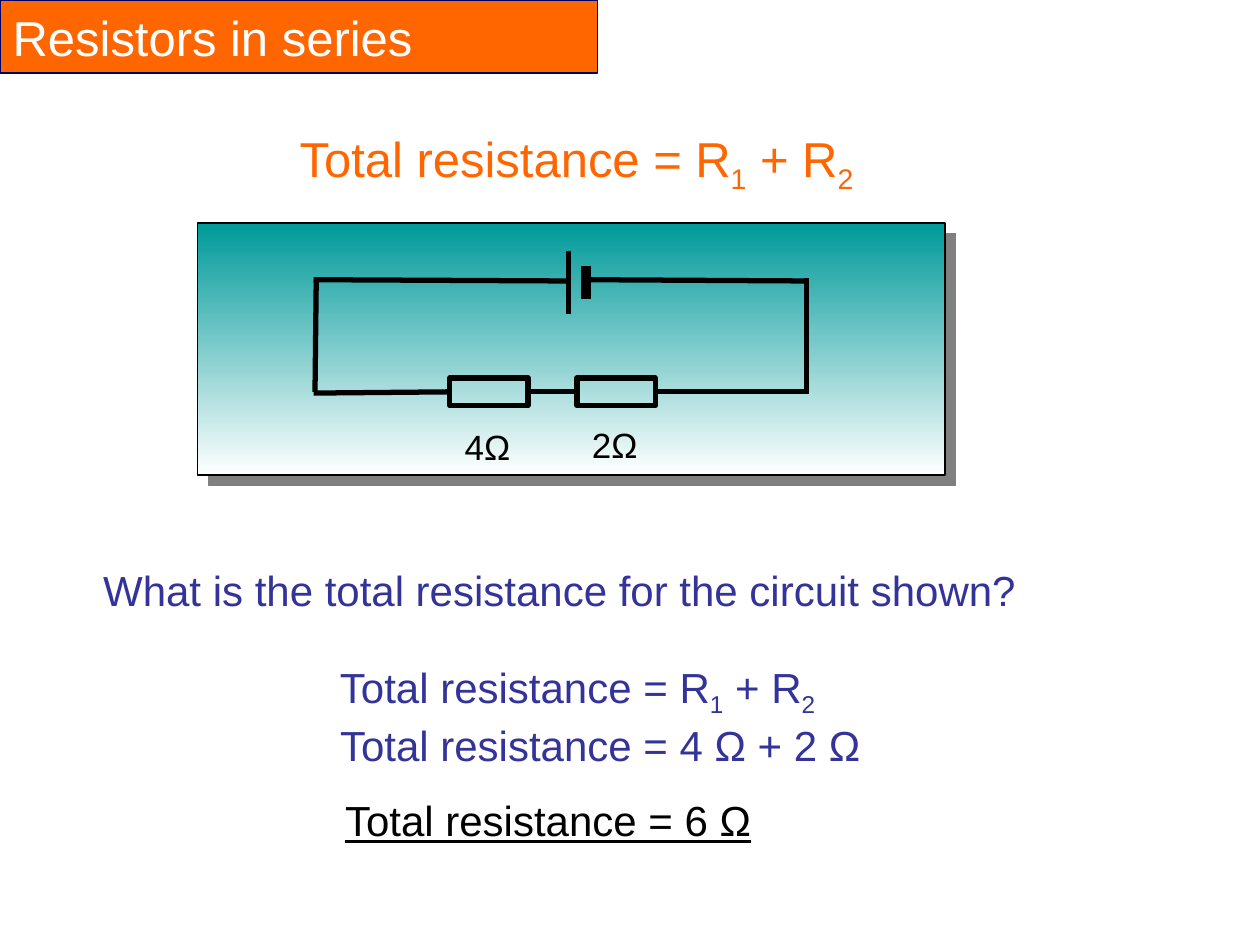
from lxml import etree
from pptx import Presentation
from pptx.dml.color import RGBColor
from pptx.enum.shapes import MSO_CONNECTOR, MSO_SHAPE
from pptx.enum.text import MSO_ANCHOR, PP_ALIGN
from pptx.oxml import parse_xml
from pptx.oxml.ns import nsdecls, qn
from pptx.util import Inches, Pt

RECTANGLE = MSO_SHAPE.RECTANGLE
STRAIGHT = MSO_CONNECTOR.STRAIGHT
LEFT = PP_ALIGN.LEFT
TOP, MIDDLE = MSO_ANCHOR.TOP, MSO_ANCHOR.MIDDLE
COLORS = {name: RGBColor.from_string(value) for name, value in {
    "orange": "FF6600", "navy": "000066", "teal": "009999", "white": "FFFFFF",
    "black": "000000", "indigo": "333399"}.items()}
SHADOW = f"""<a:effectLst {nsdecls("a")}>
  <a:outerShdw dist="107950" dir="2700000" algn="ctr" rotWithShape="0">
    <a:srgbClr val="808080"/>
  </a:outerShdw>
</a:effectLst>"""


def write(shape, parts, size, color, wrap=True, underline=None, anchor=TOP):
    frame = shape.text_frame
    frame.word_wrap = wrap
    frame.vertical_anchor = anchor
    para = frame.paragraphs[0]
    para.alignment = LEFT
    for index, part in enumerate(parts):
        span = para.add_run()
        span.text = part
        looks = {"name": "Arial", "size": Pt(size), "underline": underline}
        for key, value in looks.items():
            setattr(span.font, key, value)
        span.font.color.rgb = COLORS[color]
        if index % 2:
            span.font._element.set("baseline", "-25000")


def add_wire(start, end, width=3):
    wire = page.shapes.add_connector(STRAIGHT, *map(Inches, start + end))
    wire.line.color.rgb = COLORS["black"]
    wire.line.width = Pt(width)
    etree.SubElement(wire._element.spPr, qn("a:effectLst"))
    return wire


deck = Presentation()
deck.slide_width, deck.slide_height = Inches(10), Inches(7.5)
page = deck.slides.add_slide(deck.slide_layouts[5])

title = page.shapes.title
title.left, title.top, title.width, title.height = map(Inches, (0, 0, 4.74, 0.58))
title.fill.solid()
title.fill.fore_color.rgb = COLORS["orange"]
title.line.color.rgb = COLORS["navy"]
title.line.width = Pt(0.75)
write(title, ["Resistors in series"], 28, "white", anchor=MIDDLE)

panel = page.shapes.add_shape(RECTANGLE, *map(Inches, (1.57, 1.77, 5.93, 2)))
panel.fill.gradient()
panel.fill.gradient_angle = 270
for stop, position, color in zip(panel.fill.gradient_stops, (0, 1), ("teal", "white")):
    stop.position = position
    stop.color.rgb = COLORS[color]
panel.line.color.rgb = COLORS["black"]
panel.line.width = Pt(0.75)
panel._element.spPr.append(parse_xml(SHADOW))

resistors = []
for left, label, label_top in ((3.57, "4Ω", 3.33), (4.58, "2Ω", 3.31)):
    resistor = page.shapes.add_shape(RECTANGLE, *map(Inches, (left, 3, 0.62, 0.22)))
    resistor.shadow.inherit = False
    resistor.fill.background()
    resistor.line.color.rgb = COLORS["black"]
    resistor.line.width = Pt(3)
    resistors.append(resistor)
    box = page.shapes.add_textbox(*map(Inches, (left + 0.02, label_top, 0.57, 0.43)))
    write(box, [label], 20, "black", wrap=False)
first, second = resistors

for start, end, width in (
    ((4.51, 1.99), (4.51, 2.49), 3),
    ((4.65, 2.11), (4.65, 2.37), 6),
    ((4.65, 2.22), (6.41, 2.23), 3),
    ((2.49, 2.22), (4.5, 2.23), 3),
    ((2.5, 3.11), (2.51, 2.22), 3),
    ((6.4, 2.21), (6.4, 3.13), 3),
):
    add_wire(start, end, width)

add_wire((2.49, 3.12), (3.57, 3.11)).end_connect(first, 1)
add_wire((6.4, 3.11), (5.2, 3.11)).end_connect(second, 3)
link = add_wire((4.19, 3.11), (4.58, 3.11))
link.begin_connect(first, 3)
link.end_connect(second, 1)

formula = ["Total resistance = R", "1", " + R", "2"]
for place, parts, size, color, wrap, underline in (
    ((2.28, 0.97, 5.01, 0.57), formula, 28, "orange", True, None),
    ((0.72, 4.43, 7.45, 0.9),
     ["What is the total resistance for the circuit shown?"], 24, "indigo", False, None),
    ((2.6, 5.2, 4.04, 0.5), formula, 24, "indigo", False, None),
    ((2.6, 5.66, 4.38, 0.5),
     ["Total resistance = 4 Ω + 2 Ω"], 24, "indigo", False, None),
    ((2.64, 6.26, 3.47, 0.5), ["Total resistance = 6 Ω"], 24, "black", True, True),
):
    box = page.shapes.add_textbox(*map(Inches, place))
    write(box, parts, size, color, wrap, underline)

deck.save("out.pptx")
